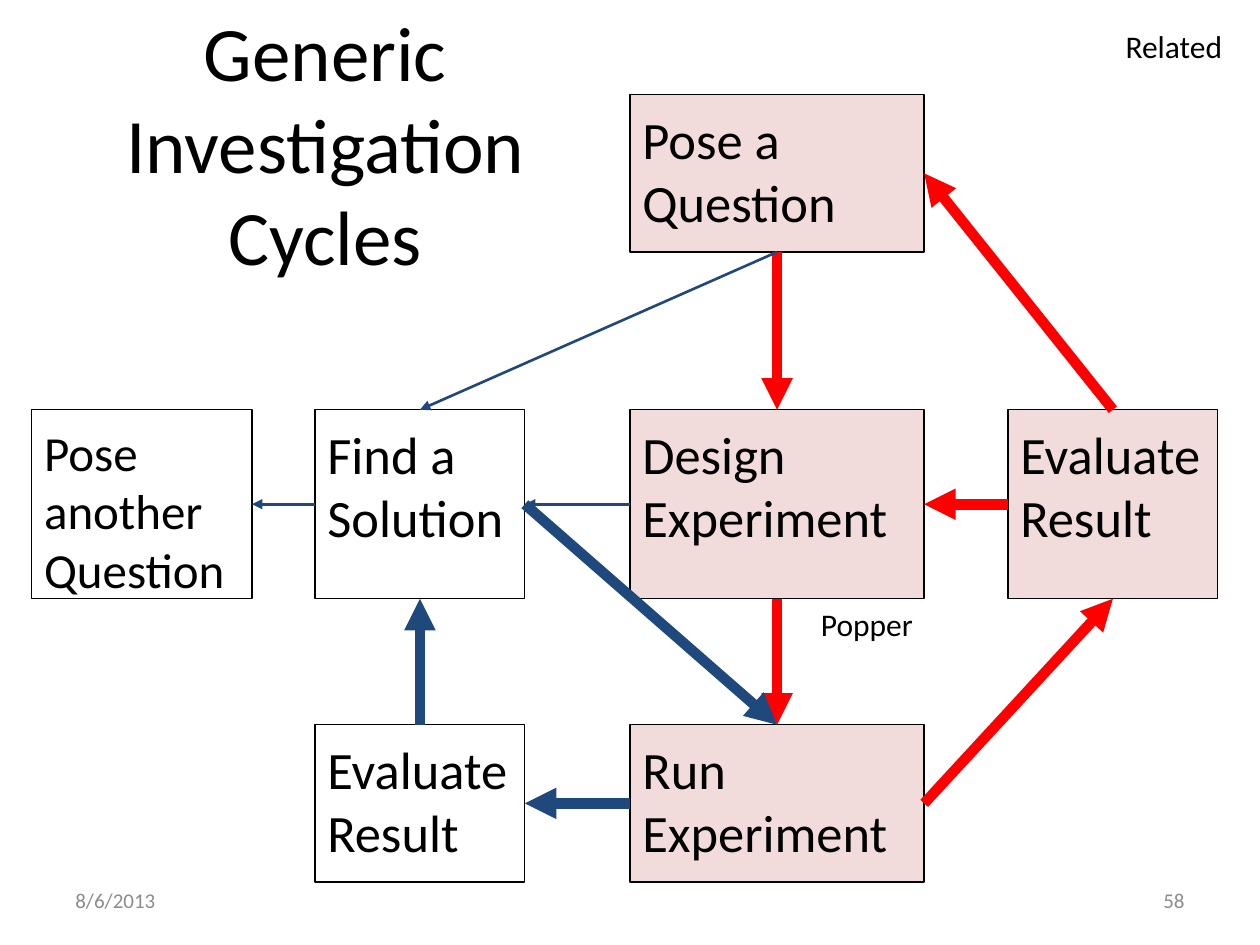
"""Build the investigation cycles slide: boxes joined by two loops of arrows."""
from lxml.etree import SubElement
from pptx import Presentation
from pptx.dml.color import RGBColor
from pptx.enum.shapes import MSO_CONNECTOR as Connector, MSO_SHAPE as Shape
from pptx.enum.text import MSO_ANCHOR as Anchor, MSO_AUTO_SIZE as AutoSize, PP_ALIGN as Align
from pptx.oxml.ns import qn
from pptx.util import Cm, Pt

BLACK = RGBColor(0x00, 0x00, 0x00)
GRAY = RGBColor(0x8C, 0x8C, 0x8C)
PINK = RGBColor(0xF2, 0xDC, 0xDB)
RED = RGBColor(0xFF, 0x00, 0x00)
BLUE = RGBColor(0x1F, 0x49, 0x7D)
FONT = "Calibri"
TOP, LEFT, BOTTOM, RIGHT = range(4)
THICK, THIN = 6, 1.5

COLUMNS = {"far": (0.64, 4.44), "left": (6.35, 4.23), "middle": (12.7, 5.93), "right": (20.32, 4.23)}
ROWS = {"top": (1.91, 3.17), "center": (8.26, 3.81), "bottom": (14.61, 3.17)}

BOXES = {
    "pose": ("middle", "top", ["Pose a Question"], 30, PINK),
    "design": ("middle", "center", ["Design", "Experiment"], 30, PINK),
    "find": ("left", "center", ["Find a Solution"], 30, None),
    "evaluate left": ("left", "bottom", ["Evaluate Result"], 30, None),
    "run": ("middle", "bottom", ["Run", "Experiment"], 30, PINK),
    "evaluate right": ("right", "center", ["Evaluate Result"], 30, PINK),
    "pose another": ("far", "center", ["Pose another", "Question"], 28, None),
}
ARROWS = [
    ("pose", BOTTOM, "design", TOP, RED, THICK),
    ("pose", BOTTOM, "find", TOP, BLUE, THIN),
    ("evaluate right", TOP, "pose", RIGHT, RED, THICK),
    ("design", BOTTOM, "run", TOP, RED, THICK),
    ("find", RIGHT, "run", TOP, BLUE, THICK),
    ("run", LEFT, "evaluate left", RIGHT, BLUE, THICK),
    ("run", RIGHT, "evaluate right", BOTTOM, RED, THICK),
    ("evaluate left", TOP, "find", BOTTOM, BLUE, THICK),
    ("evaluate right", LEFT, "design", RIGHT, RED, THICK),
    ("find", LEFT, "pose another", RIGHT, BLUE, THIN),
    ("design", LEFT, "find", RIGHT, BLUE, THIN),
]
TITLE = ("Generic Investigation Cycles", (1.27, 0.21, 10.58, 5.71), 44, BLACK, Align.CENTER, Anchor.BOTTOM)
FOOTERS = [
    ("8/6/2013", (1.27, 17.65, 5.93, 1.01), 12, GRAY, Align.LEFT, Anchor.MIDDLE),
    ("58", (18.2, 17.65, 5.93, 1.01), 12, GRAY, Align.RIGHT, Anchor.MIDDLE),
]
LABELS = [
    ("Popper", (16.3, 12.07, 2.41, 1.03), 18, BLACK, Align.LEFT, Anchor.TOP),
    ("Related", (22.44, 0.42, 2.76, 1.03), 18, BLACK, Align.LEFT, Anchor.TOP),
]


def write(shape, lines, size, color, align, anchor, margin):
    frame = shape.text_frame
    frame.word_wrap = True
    frame.vertical_anchor = anchor
    frame.margin_left = frame.margin_right = Cm(0.25)
    frame.margin_top = frame.margin_bottom = Cm(margin)
    for index, line in enumerate(lines):
        paragraph = frame.add_paragraph() if index else frame.paragraphs[0]
        paragraph.alignment = align
        run = paragraph.add_run()
        run.text = line
        run.font.name, run.font.size = FONT, Pt(size)
        run.font.color.rgb = color


def add_text(slide, text, place, size, color, align, anchor, margin=0.13):
    shape = slide.shapes.add_textbox(*map(Cm, place))
    write(shape, [text], size, color, align, anchor, margin)
    return shape


def add_box(slide, column, row, lines, size, fill):
    (left, width), (top, height) = COLUMNS[column], ROWS[row]
    shape = slide.shapes.add_shape(Shape.RECTANGLE, *map(Cm, (left, top, width, height)))
    shape.shadow.inherit = False
    if fill is None:
        shape.fill.background()
    else:
        shape.fill.solid()
        shape.fill.fore_color.rgb = fill
    shape.line.color.rgb = BLACK
    shape.line.width = Pt(0.75)
    write(shape, lines, size, BLACK, Align.LEFT, Anchor.TOP, 0.25)
    return shape


def add_arrow(slide, start, start_side, end, end_side, color, width):
    arrow = slide.shapes.add_connector(Connector.STRAIGHT, 0, 0, 0, 0)
    arrow.begin_connect(start, start_side)
    arrow.end_connect(end, end_side)
    arrow.line.color.rgb = color
    arrow.line.width = Pt(width)
    SubElement(arrow.line._get_or_add_ln(), qn("a:tailEnd"), type="triangle")
    SubElement(arrow._element.spPr, qn("a:effectLst"))


def main():
    presentation = Presentation()
    presentation.slide_width, presentation.slide_height = Cm(25.4), Cm(19.05)
    slide = presentation.slides.add_slide(presentation.slide_layouts[6])
    add_text(slide, *TITLE, margin=0.25)
    boxes = {name: add_box(slide, *box) for name, box in BOXES.items()}
    for start, start_side, end, end_side, color, width in ARROWS:
        add_arrow(slide, boxes[start], start_side, boxes[end], end_side, color, width)
    for footer in FOOTERS:
        add_text(slide, *footer)
    for label in LABELS:
        frame = add_text(slide, *label).text_frame
        frame.word_wrap = False
        frame.auto_size = AutoSize.SHAPE_TO_FIT_TEXT
    presentation.save("out.pptx")


if __name__ == "__main__":
    main()
